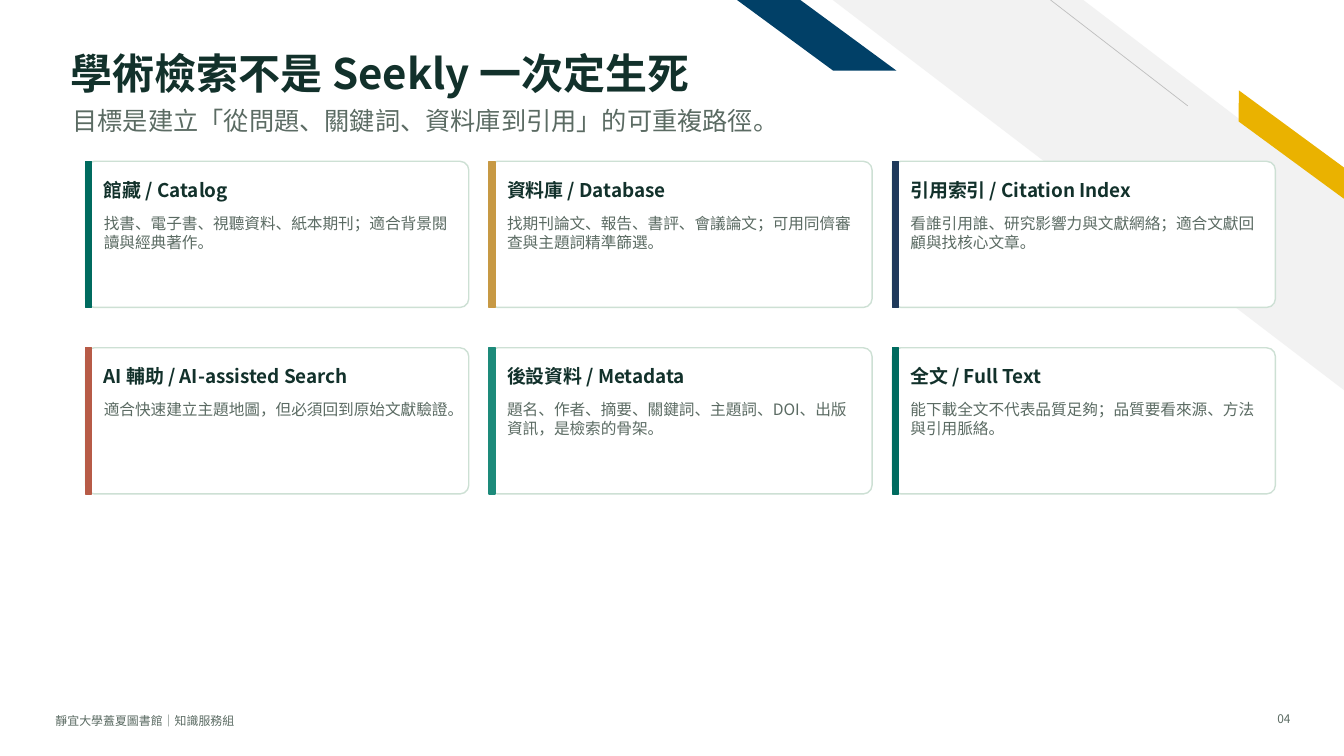
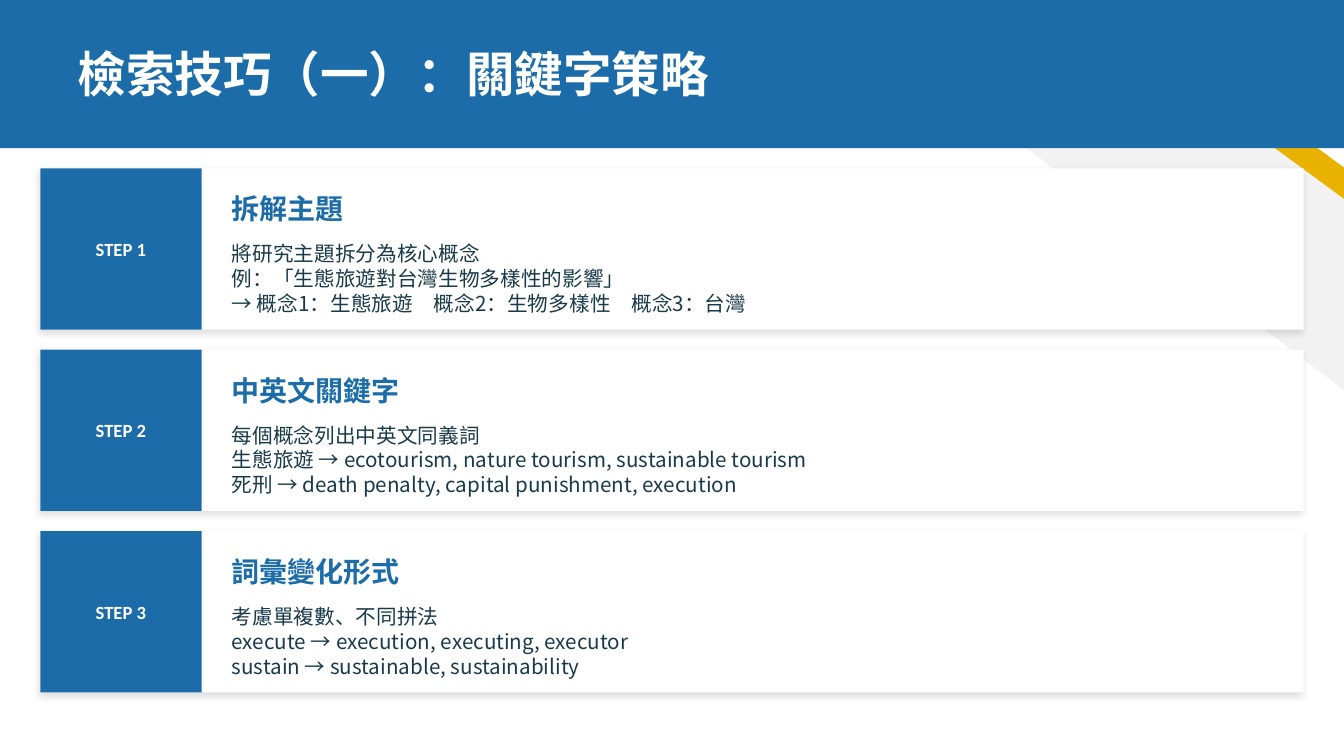
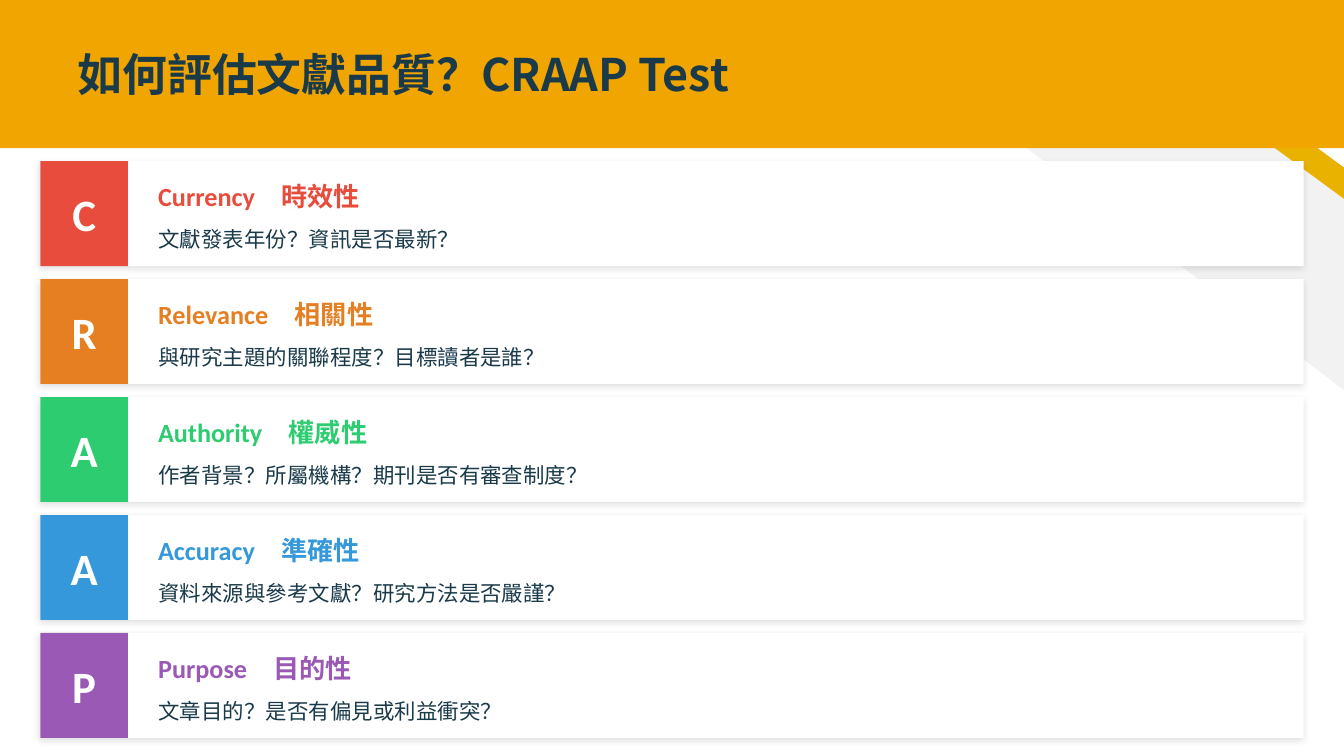
from dataclasses import dataclass

from lxml.etree import SubElement
from pptx import Presentation
from pptx.dml.color import RGBColor
from pptx.enum.shapes import MSO_CONNECTOR, MSO_SHAPE
from pptx.enum.text import MSO_ANCHOR, MSO_AUTO_SIZE, PP_ALIGN
from pptx.oxml.ns import qn
from pptx.util import Inches, Pt

WIDTH, HEIGHT = 13.33, 7.5
BAND_HEIGHT = 1.47
TITLE_ONLY = 5

SANS_SC = "Noto Sans CJK SC"
SANS_TC = "Noto Sans CJK TC"
CALIBRI = "Calibri"

WHITE = RGBColor(0xFF, 0xFF, 0xFF)
PALE_GRAY = RGBColor(0xF2, 0xF2, 0xF2)
LINE_GRAY = RGBColor(0xBF, 0xBF, 0xBF)
GOLD = RGBColor(0xEA, 0xB2, 0x00)
NAVY = RGBColor(0x01, 0x40, 0x67)
FOREST = RGBColor(0x12, 0x31, 0x2B)
MOSS = RGBColor(0x5B, 0x6B, 0x63)
CARD_BORDER = RGBColor(0xCD, 0xE0, 0xD4)
GREEN = RGBColor(0x00, 0x6B, 0x5F)
OCHRE = RGBColor(0xC7, 0x99, 0x44)
INDIGO = RGBColor(0x1F, 0x3A, 0x5B)
BRICK = RGBColor(0xB7, 0x5B, 0x47)
TEAL = RGBColor(0x1D, 0x8A, 0x7A)
BLUE = RGBColor(0x1B, 0x6C, 0xA8)
AMBER = RGBColor(0xF0, 0xA5, 0x00)
INK = RGBColor(0x1A, 0x3A, 0x4A)
RED = RGBColor(0xE7, 0x4C, 0x3C)
ORANGE = RGBColor(0xE6, 0x7E, 0x22)
EMERALD = RGBColor(0x2E, 0xCC, 0x71)
SKY = RGBColor(0x34, 0x98, 0xDB)
PURPLE = RGBColor(0x9B, 0x59, 0xB6)

TOPICS = [
    ("館藏 / Catalog", "找書、電子書、視聽資料、紙本期刊；適合背景閱讀與經典著作。", GREEN),
    ("資料庫 / Database",
     "找期刊論文、報告、書評、會議論文；可用同儕審查與主題詞精準篩選。", OCHRE),
    ("引用索引 / Citation Index",
     "看誰引用誰、研究影響力與文獻網絡；適合文獻回顧與找核心文章。", INDIGO),
    ("AI 輔助 / AI-assisted Search",
     "適合快速建立主題地圖，但必須回到原始文獻驗證。", BRICK),
    ("後設資料 / Metadata",
     "題名、作者、摘要、關鍵詞、主題詞、DOI、出版資訊，是檢索的骨架。", TEAL),
    ("全文 / Full Text",
     "能下載全文不代表品質足夠；品質要看來源、方法與引用脈絡。", GREEN),
]

STEPS = [
    ("STEP 1", "拆解主題",
     ["將研究主題拆分為核心概念",
      "例：「生態旅遊對台灣生物多樣性的影響」",
      "→ 概念1：生態旅遊　概念2：生物多樣性　概念3：台灣"], BLUE),
    ("STEP 2", "中英文關鍵字",
     ["每個概念列出中英文同義詞",
      "生態旅遊 → ecotourism, nature tourism, sustainable tourism",
      "死刑 → death penalty, capital punishment, execution"], BLUE),
    ("STEP 3", "詞彙變化形式",
     ["考慮單複數、不同拼法",
      "execute → execution, executing, executor",
      "sustain → sustainable, sustainability"], BLUE),
]

CRITERIA = [
    ("C", "Currency　時效性", ["文獻發表年份？資訊是否最新？"], RED),
    ("R", "Relevance　相關性", ["與研究主題的關聯程度？目標讀者是誰？"], ORANGE),
    ("A", "Authority　權威性", ["作者背景？所屬機構？期刊是否有審查制度？"], EMERALD),
    ("A", "Accuracy　準確性", ["資料來源與參考文獻？研究方法是否嚴謹？"], SKY),
    ("P", "Purpose　目的性", ["文章目的？是否有偏見或利益衝突？"], PURPLE),
]


@dataclass
class TextStyle:
    font: str
    size: float
    color: RGBColor = None
    bold: bool = False


@dataclass
class RowStyle:
    """Measures of a stack of badge rows; heading and body are (offset, height)."""
    top: float
    height: float
    gap: float
    badge_width: float
    heading_place: tuple
    body_place: tuple
    badge: TextStyle
    heading: TextStyle
    body: TextStyle


STEP_ROWS = RowStyle(1.67, 1.6, 0.2, 1.6, (0.1, 0.6), (0.69, 0.8),
                     TextStyle(CALIBRI, 13.3, WHITE, True),
                     TextStyle(SANS_TC, 20, bold=True),
                     TextStyle(SANS_TC, 14.7, INK))
CRITERIA_ROWS = RowStyle(1.6, 1.04, 0.13, 0.87, (0.09, 0.51), (0.56, 0.43),
                         TextStyle(CALIBRI, 32, WHITE, True),
                         TextStyle(CALIBRI, 18.7, bold=True),
                         TextStyle(SANS_TC, 15.3, INK))


def inches(*lengths):
    return [Inches(length) for length in lengths]


def write(shape, lines, style, color=None, align=PP_ALIGN.LEFT,
          anchor=MSO_ANCHOR.MIDDLE, inset=True):
    frame = shape.text_frame
    frame.word_wrap = True
    frame.auto_size = MSO_AUTO_SIZE.NONE
    frame.vertical_anchor = anchor
    if not inset:
        frame.margin_left = frame.margin_right = 0
        frame.margin_top = frame.margin_bottom = 0
    frame.text = "\n".join(lines)
    for para in frame.paragraphs:
        para.alignment = align
        para.font.size = Pt(style.size)
        para.font.bold = style.bold
        para.font.color.rgb = color or style.color
        para.font.name = style.font
        defaults = para._p.pPr.find(qn("a:defRPr"))
        SubElement(defaults, qn("a:ea"), typeface=style.font)


def add_text(page, place, lines, style, **options):
    write(page.shapes.add_textbox(*inches(*place)), lines, style, **options)


def add_block(page, kind, place, fill, line=None, adjustment=None):
    block = page.shapes.add_shape(kind, *inches(*place))
    block.shadow.inherit = False
    block.fill.solid()
    block.fill.fore_color.rgb = fill
    if line is None:
        block.line.fill.background()
    else:
        block.line.color.rgb = line
        block.line.width = Pt(1)
    if adjustment is not None:
        block.adjustments[0] = adjustment
    return block


def add_soft_shadow(block):
    effects = block._element.spPr.find(qn("a:effectLst"))
    shadow = SubElement(effects, qn("a:outerShdw"), blurRad=str(Pt(5)),
                        dist=str(Pt(2)), dir=str(135 * 60000),
                        algn="bl", rotWithShape="0")
    color = SubElement(shadow, qn("a:srgbClr"), val="000000")
    SubElement(color, qn("a:alpha"), val="12000")


def decorate_layout(layout, page):
    """Draw the corner stripes on the page, then move them to its layout."""
    for placeholder in list(layout.placeholders)[1:]:
        placeholder.element.getparent().remove(placeholder.element)

    stripe = add_block(page, MSO_SHAPE.DIAGONAL_STRIPE,
                       (WIDTH - 5.07, 0, 5.07, 3.87), PALE_GRAY, adjustment=0.51)
    hairline = page.shapes.add_connector(MSO_CONNECTOR.STRAIGHT,
                                         *inches(11.78, 1.05, 10.42, 0))
    hairline.line.color.rgb = LINE_GRAY
    hairline.line.width = Pt(0.5)
    SubElement(hairline._element.spPr, qn("a:effectLst"))
    gold_bar = add_block(page, MSO_SHAPE.PARALLELOGRAM,
                         (12.07, 1.31, 1.48, 0.25), GOLD, adjustment=0.72)
    gold_bar.rotation = 36.3
    navy_bar = add_block(page, MSO_SHAPE.PARALLELOGRAM,
                         (7.31, 0, 1.58, 0.7), NAVY, adjustment=1.36)
    for block in (stripe, gold_bar, navy_bar):
        block._element.spPr.find(qn("a:xfrm")).set("flipH", "1")
    for shape in (stripe, hairline, gold_bar, navy_bar):
        layout.shapes.element.append(shape.element)


def set_title(page, text, place, style, inset=True):
    title = page.shapes.title
    title.left, title.top, title.width, title.height = inches(*place)
    write(title, [text], style, inset=inset)
    page.shapes.element.append(title.element)


def add_band_title(page, text, band_color, style):
    add_block(page, MSO_SHAPE.RECTANGLE, (0, 0, WIDTH, BAND_HEIGHT), band_color)
    set_title(page, text, (0.67, 0.13, 12, 1.2), style)


def add_topic_card(page, left, top, width, height, heading, body, accent):
    add_block(page, MSO_SHAPE.ROUNDED_RECTANGLE, (left, top, width, height),
              WHITE, CARD_BORDER, adjustment=0.06)
    add_block(page, MSO_SHAPE.RECTANGLE, (left, top, 0.06, height), accent, accent)
    text_left, text_width = left + 0.18, width - 0.32
    add_text(page, (text_left, top + 0.16, text_width, 0.24), [heading],
             TextStyle(SANS_SC, 13.5, FOREST, True), inset=False)
    add_text(page, (text_left, top + 0.52, text_width, 0.8), [body],
             TextStyle(SANS_SC, 11.2, MOSS), anchor=MSO_ANCHOR.TOP, inset=False)


def add_badge_rows(page, rows, style):
    left, width = 0.4, WIDTH - 0.8
    text_left = left + style.badge_width + 0.2
    text_width = left + width - 0.3 - text_left
    for index, (label, heading, body, color) in enumerate(rows):
        top = style.top + index * (style.height + style.gap)
        card = add_block(page, MSO_SHAPE.RECTANGLE,
                         (left, top, width, style.height), WHITE)
        add_soft_shadow(card)
        badge = add_block(page, MSO_SHAPE.RECTANGLE,
                          (left, top, style.badge_width, style.height), color)
        write(badge, [label], style.badge, align=PP_ALIGN.CENTER)
        offset, height = style.heading_place
        add_text(page, (text_left, top + offset, text_width, height),
                 [heading], style.heading, color=color)
        offset, height = style.body_place
        add_text(page, (text_left, top + offset, text_width, height),
                 body, style.body)


def build_topics(page):
    set_title(page, "學術檢索不是 Seekly 一次定生死", (0.7, 0.45, 11.8, 0.55),
              TextStyle(SANS_SC, 30, FOREST, True), inset=False)
    add_text(page, (0.72, 1.05, 10.9, 0.28),
             ["目標是建立「從問題、關鍵詞、資料庫到引用」的可重複路徑。"],
             TextStyle(SANS_SC, 18, MOSS), inset=False)
    for index, topic in enumerate(TOPICS):
        row, column = divmod(index, 3)
        add_topic_card(page, 0.85 + 4 * column, 1.6 + 1.85 * row, 3.8, 1.45, *topic)
    footer = TextStyle(SANS_SC, 8.5, MOSS)
    add_text(page, (0.55, 7.05, 5.2, 0.2), ["靜宜大學蓋夏圖書館｜知識服務組"],
             footer, inset=False)
    add_text(page, (12.35, 7.02, 0.45, 0.22), ["04"], footer,
             align=PP_ALIGN.RIGHT, inset=False)


def build_steps(page):
    add_band_title(page, "檢索技巧（一）：關鍵字策略", BLUE,
                   TextStyle(SANS_TC, 34.7, WHITE, True))
    add_badge_rows(page, STEPS, STEP_ROWS)


def build_criteria(page):
    add_band_title(page, "如何評估文獻品質？CRAAP Test", AMBER,
                   TextStyle(SANS_TC, 32, INK, True))
    add_badge_rows(page, CRITERIA, CRITERIA_ROWS)


def main():
    deck = Presentation()
    deck.slide_width, deck.slide_height = inches(WIDTH, HEIGHT)
    layout = deck.slide_layouts[TITLE_ONLY]
    pages = [deck.slides.add_slide(layout) for _ in range(3)]
    decorate_layout(layout, pages[0])
    for build, page in zip((build_topics, build_steps, build_criteria), pages):
        build(page)
    deck.save("out.pptx")


if __name__ == "__main__":
    main()
